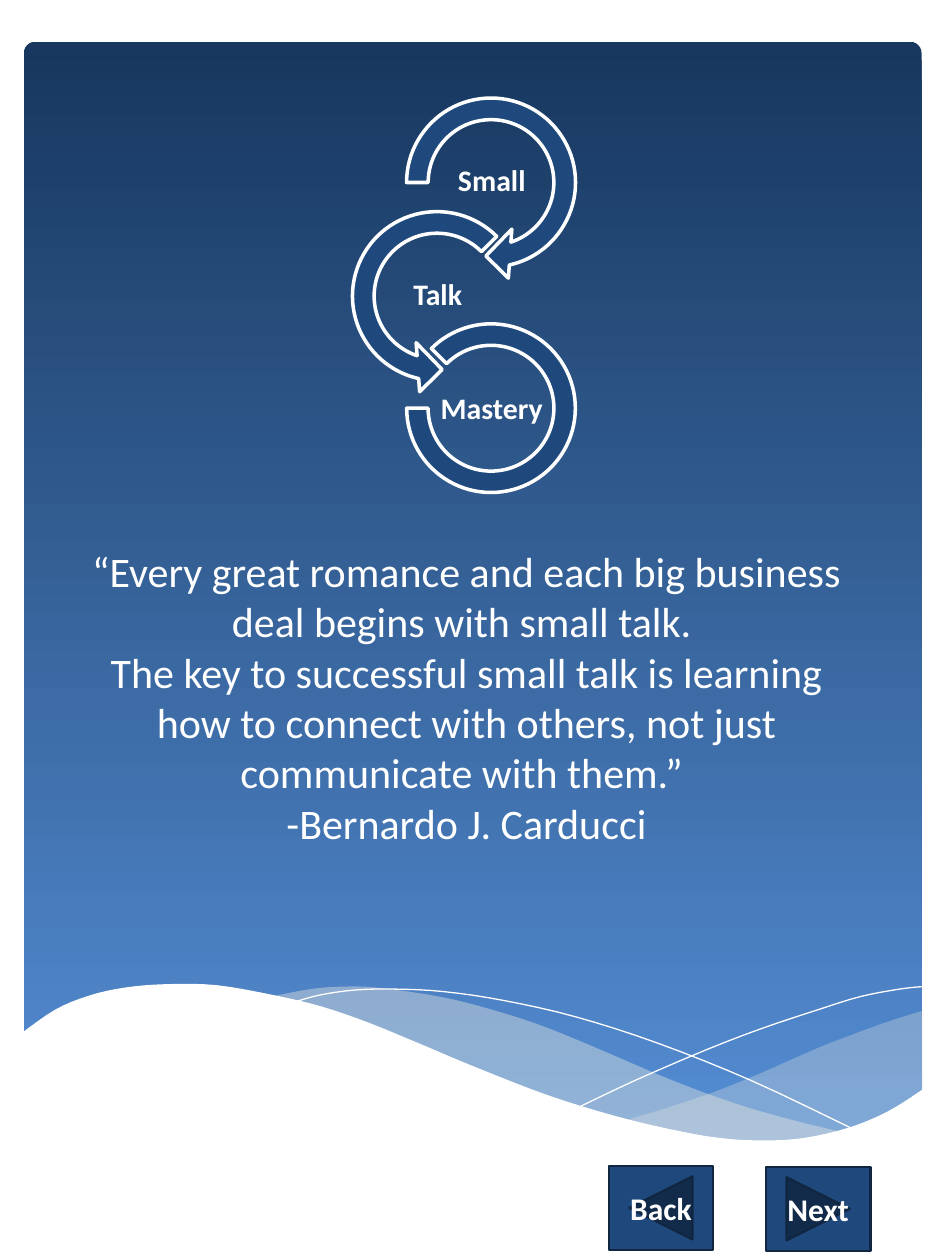
from lxml import etree
from pptx import Presentation
from pptx import util as u
from pptx.dml.color import RGBColor
from pptx.enum import shapes, text
from pptx.oxml.ns import qn

COLOURS = {
    "white": "FFFFFF",
    "night": "17375E",
    "sky": "558ED5",
    "navy": "1F497D",
    "edge": "102641",
    "mist": "EEECE1",
}
FONT = "Calibri"
SHAPE = shapes.MSO_SHAPE

# Wave edges, as (x, y) in cm
RIGHT_WAVE = [
    [(18.62, 20.37), (17.83, 20.62), (16.99, 20.93), (16.41, 21.16),
     (15.37, 21.62), (14.38, 22.02), (13.46, 22.33), (12.62, 22.58)],
    [(12.62, 22.58), (13.44, 22.78), (14.2, 22.94), (15.11, 23.01),
     (15.93, 22.99), (16.79, 22.86), (17.55, 22.61), (18.11, 22.33),
     (18.62, 21.97)],
]
MIDDLE_WAVE = [
    [(17.02, 22.83), (15.98, 22.58), (14.78, 22.23), (13.46, 21.74),
     (11.99, 21.11), (10.85, 20.65), (9.8, 20.32), (8.86, 20.09),
     (7.62, 19.91), (6.88, 19.89), (6.25, 19.94), (5.46, 20.09)],
    [(5.46, 20.09), (6.53, 20.35), (7.72, 20.75), (8.56, 21.11),
     (10.11, 21.74), (11.46, 22.25), (12.7, 22.63), (13.77, 22.89),
     (14.73, 23.01), (15.6, 23.04), (16.36, 22.99), (17.02, 22.83)],
]
FRONT_WAVE = [
    [(18.62, 21.95), (17.91, 22.4), (17.12, 22.73), (16.21, 22.94),
     (15.39, 22.99), (14.5, 22.94), (13.49, 22.76), (12.34, 22.48),
     (11.02, 22.07), (9.58, 21.51), (8.51, 21.06), (7.44, 20.62),
     (6.48, 20.29), (5.56, 20.07), (4.37, 19.86), (3.35, 19.84),
     (2.51, 19.91), (1.8, 20.07), (1.12, 20.35), (0.43, 20.83)],
    [(0.43, 24.77), (18.62, 24.77)],
]
FALLING_LINE = [
    (5.89, 20.22), (6.4, 20.07), (7.14, 19.96), (7.95, 19.94), (8.94, 19.99),
    (10.16, 20.17), (11.61, 20.5), (13.26, 21.03), (15.16, 21.79), (17.3, 22.81)]
RISING_LINE = [
    (11.71, 22.3), (12.83, 21.77), (14.25, 21.16), (15.37, 20.73),
    (16.51, 20.35), (17.35, 20.09), (18.14, 19.94), (18.59, 19.89)]

# Label, preset, ring box (left, top, size), label left, adjustments
RINGS = [
    ("Small", SHAPE.CIRCULAR_ARROW, (7.92, 1.7, 3.96), 8.81,
     (0.11, 11.42, 45, 108, 0.125)),
    ("Talk", SHAPE.LEFT_CIRCULAR_ARROW, (6.83, 3.99, 3.96), 7.72,
     (0.11, 11.42, 63, 189, 0.125)),
    ("Mastery", SHAPE.BLOCK_ARC, (8.2, 6.53, 3.4), 8.81, (135, 108, 0.127)),
]
LABEL_TOP, LABEL_STEP = 3.12, 2.3

QUOTE = [
    "“Every great romance and each big business deal begins with small talk. ",
    "The key to successful small talk is learning how to connect with others, "
    "not just communicate with them.” ",
    "-Bernardo J. Carducci",
]


def rgb(name):
    return RGBColor.from_string(COLOURS[name])


def paint(shape, fill=None, line=None, width=0, opacity=100):
    shape.shadow.inherit = False
    if fill:
        shape.fill.solid()
        shape.fill.fore_color.rgb = rgb(fill)
        if opacity < 100:
            colour = shape.fill._xPr.find(".//" + qn("a:srgbClr"))
            etree.SubElement(colour, qn("a:alpha"), val=str(opacity * 1000))
    else:
        shape.fill.background()
    if line:
        shape.line.color.rgb = rgb(line)
        shape.line.width = u.Pt(width)
    else:
        shape.line.fill.background()


def write(shape, lines, size, bold=False):
    """Put centred white paragraphs into the shape and return its text frame."""
    frame = shape.text_frame
    frame.word_wrap = True
    frame.text = "\n".join(lines)
    for paragraph in frame.paragraphs:
        paragraph.alignment = text.PP_ALIGN.CENTER
        font = paragraph.runs[0].font
        font.name, font.size, font.bold = FONT, u.Pt(size), bold
        font.color.rgb = rgb("white")
    return frame


def smooth(points, steps=4):
    """Return points along a Catmull-Rom curve through the given ones."""
    padded = [points[0], *points, points[-1]]
    curve = [points[0]]
    for a, b, c, d in zip(padded, padded[1:], padded[2:], padded[3:]):
        for step in range(1, steps + 1):
            t = step / steps
            curve.append(tuple(
                q + t / 2 * (r - p + t * (2 * p - 5 * q + 4 * r - s
                                          + t * (3 * (q - r) + s - p)))
                for p, q, r, s in zip(a, b, c, d)))
    return curve


def add_curve(slide, edges, closed=True, **look):
    points = [(u.Cm(x), u.Cm(y)) for edge in edges for x, y in smooth(edge)]
    builder = slide.shapes.build_freeform(*points[0])
    builder.add_line_segments(points[1:], close=closed)
    paint(builder.convert_to_shape(), **look)


def add_panel(slide):
    panel = slide.shapes.add_shape(
        SHAPE.ROUNDED_RECTANGLE, u.Cm(0.48), u.Cm(0.84), u.Cm(18.1), u.Cm(22.35))
    panel.adjustments[0] = 0.013
    paint(panel)
    panel.fill.gradient()
    panel.fill.gradient_angle = 270
    for stop, name in zip(panel.fill.gradient_stops, ("night", "sky")):
        stop.color.rgb = rgb(name)


def add_waves(slide):
    add_curve(slide, RIGHT_WAVE, fill="mist", opacity=29)
    add_curve(slide, MIDDLE_WAVE, fill="mist", opacity=40)
    for line in (FALLING_LINE, RISING_LINE):
        add_curve(slide, [line], closed=False, line="white")
    add_curve(slide, FRONT_WAVE, fill="white")


def add_ring(slide, preset, box, adjustments):
    left, top, size = map(u.Cm, box)
    ring = slide.shapes.add_shape(preset, left, top, size, size)
    for index, value in enumerate(adjustments):
        ring.adjustments[index] = value
    paint(ring, "navy", "white", 2)


def add_ring_label(slide, label, left, top):
    box = slide.shapes.add_textbox(u.Cm(left), u.Cm(top), u.Cm(2.21), u.Cm(1.09))
    frame = write(box, [label], 17, bold=True)
    frame.vertical_anchor = text.MSO_ANCHOR.MIDDLE
    frame.margin_left = frame.margin_right = u.Cm(0.03)
    frame.margin_top = frame.margin_bottom = u.Cm(0.03)
    frame.paragraphs[0].line_spacing = 0.9


def add_quote(slide):
    box = slide.shapes.add_textbox(
        u.Cm(1.52), u.Cm(10.87), u.Cm(15.77), u.Cm(6.4))
    frame = write(box, QUOTE, 24)
    frame.auto_size = text.MSO_AUTO_SIZE.SHAPE_TO_FIT_TEXT


def add_button(slide, preset, label, left, top):
    button = slide.shapes.add_shape(
        preset, u.Cm(left), u.Cm(top), u.Cm(2.11), u.Cm(1.7))
    paint(button, "navy", "edge", 1.25)
    write(button, [label], 18, bold=True).vertical_anchor = text.MSO_ANCHOR.MIDDLE


def main():
    deck = Presentation()
    deck.slide_width, deck.slide_height = u.Cm(19.05), u.Cm(25.4)
    slide = deck.slides.add_slide(deck.slide_layouts[6])
    add_panel(slide)
    add_waves(slide)
    for row, (label, preset, box, label_left, adjustments) in enumerate(RINGS):
        add_ring(slide, preset, box, adjustments)
        add_ring_label(slide, label, label_left, LABEL_TOP + row * LABEL_STEP)
    add_quote(slide)
    add_button(slide, SHAPE.ACTION_BUTTON_BACK_OR_PREVIOUS, "Back", 12.27, 23.5)
    add_button(slide, SHAPE.ACTION_BUTTON_FORWARD_OR_NEXT, "Next", 15.44, 23.52)
    deck.save("out.pptx")


if __name__ == "__main__":
    main()
